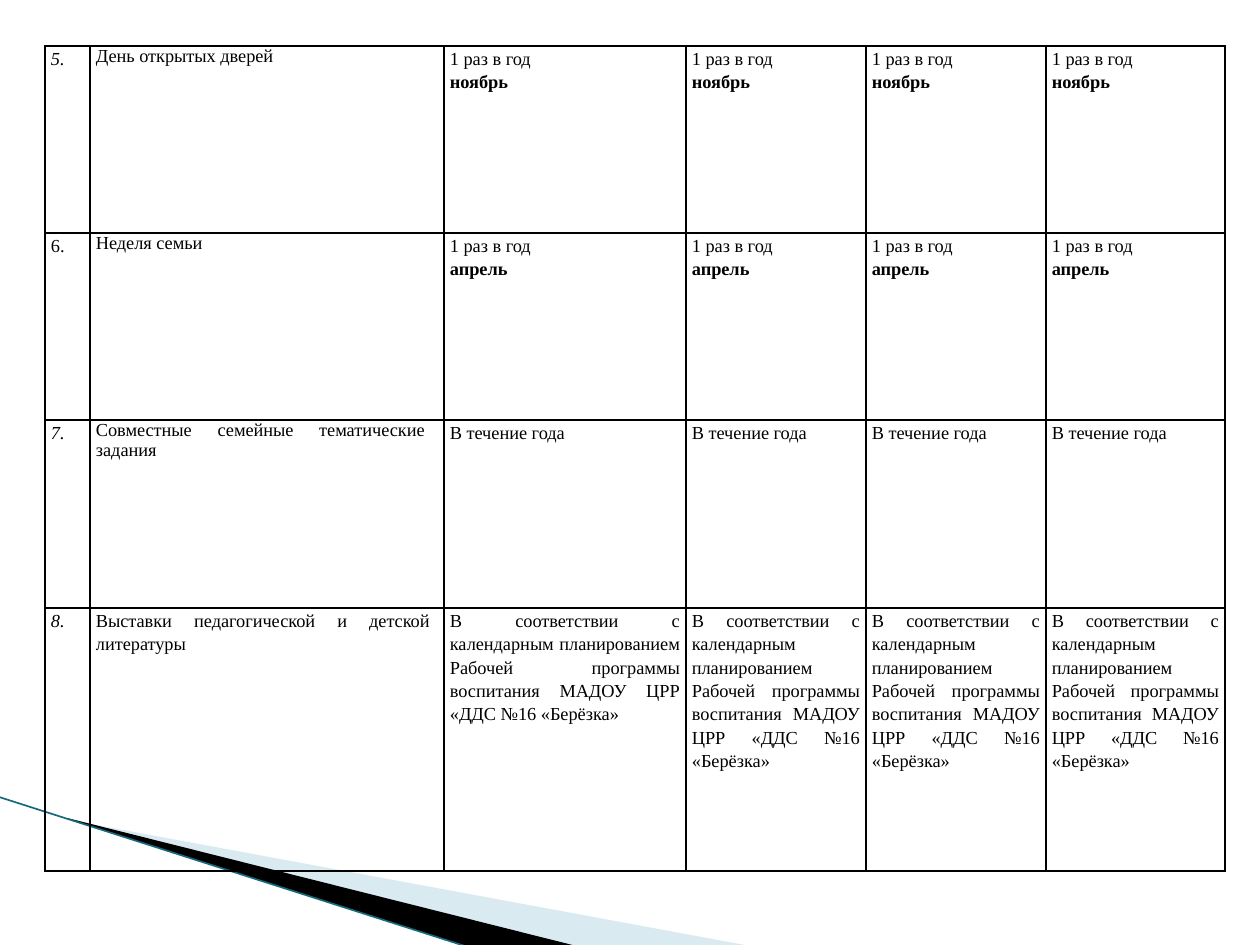
from lxml import etree
from pptx import Presentation
from pptx import util as u
from pptx.dml.color import RGBColor
from pptx.enum import shapes, text
from pptx.oxml.ns import qn

PX = 914400 / 126
BLACK = RGBColor(0, 0, 0)
PALE_BLUE = RGBColor(0xA0, 0xCB, 0xDC)
TEAL = RGBColor(0x16, 0x69, 0x7F)
FONT = "Times New Roman"

PLAN = "В соответствии с календарным планированием Рабочей программы воспитания МАДОУ ЦРР «ДДС №16 «Берёзка»"
GROUPS = 4
EVENTS = [
    {"number": "5.", "italic": True, "title": "День открытых дверей", "spacing": 0.99,
     "indent": 0, "when": ["1 раз в год"], "month": "ноябрь"},
    {"number": "6.", "italic": False, "title": "Неделя семьи", "spacing": 0.99,
     "indent": 0, "when": ["1 раз в год"], "month": "апрель"},
    {"number": "7.", "italic": True, "title": "Совместные семейные тематические задания", "spacing": 0.99,
     "indent": 13, "when": ["В течение года"], "month": None},
    {"number": "8.", "italic": True, "title": "Выставки педагогической и детской литературы", "spacing": 1.15,
     "indent": 8, "when": [PLAN], "month": None},
]
TABLE_LEFT, TABLE_TOP = 45, 46
COLUMNS = [45, 354, 242, 180, 180, 179]
ROWS = [187, 187, 188, 263]

PALE_WEDGE = [(69, 820), (750, 946), (575, 946), (69, 819)]
BLACK_WEDGE = [(67, 818), (576, 946), (469, 947), (68, 819)]
EDGE = [(-1, 797), (468, 947)]


def px(value):
    return u.Emu(round(value * PX))


def add_wedge(page, points, color, alpha=None):
    builder = page.shapes.build_freeform(*points[0], scale=PX)
    builder.add_line_segments(points[1:], close=True)
    wedge = builder.convert_to_shape()
    wedge.shadow.inherit = False
    wedge.line.fill.background()
    wedge.fill.solid()
    wedge.fill.fore_color.rgb = color
    if alpha:
        tint = wedge._element.spPr.find(".//" + qn("a:srgbClr"))
        etree.SubElement(tint, qn("a:alpha"), val=str(alpha * 1000))


def add_edge(page):
    (x1, y1), (x2, y2) = EDGE
    edge = page.shapes.add_connector(shapes.MSO_CONNECTOR.STRAIGHT, px(x1), px(y1), px(x2), px(y2))
    edge.line.color.rgb = TEAL
    edge.line.width = u.Pt(0.95)
    etree.SubElement(edge._element.spPr, qn("a:effectLst"))


def style_cell(cell):
    cell.margin_left = cell.margin_right = px(6)
    cell.margin_top = cell.margin_bottom = 0
    properties = cell._tc.get_or_add_tcPr()
    for side in ("lnL", "lnR", "lnT", "lnB"):
        border = etree.SubElement(properties, qn("a:" + side), w=str(u.Pt(1)))
        fill = etree.SubElement(border, qn("a:solidFill"))
        etree.SubElement(fill, qn("a:srgbClr"), val=str(BLACK))
    cell.fill.background()


def write_cell(cell, lines, spacing=1.15, indent=0):
    style_cell(cell)
    for index, (words, bold, italic) in enumerate(lines):
        para = cell.text_frame.add_paragraph() if index else cell.text_frame.paragraphs[0]
        para.alignment = text.PP_ALIGN.JUSTIFY
        para.line_spacing = spacing
        if indent:
            para._p.get_or_add_pPr().set("marR", str(px(indent)))
        span = para.add_run()
        span.text = words
        span.font.name = FONT
        span.font.size = u.Pt(10.5)
        span.font.bold = bold
        span.font.italic = italic
        span.font.color.rgb = BLACK


def add_schedule(page):
    frame = page.shapes.add_table(len(ROWS), len(COLUMNS), px(TABLE_LEFT), px(TABLE_TOP),
                                  px(sum(COLUMNS)), px(sum(ROWS)))
    table = frame.table
    table.first_row = table.horz_banding = False
    for column, width in zip(table.columns, COLUMNS):
        column.width = px(width)
    for row, height, event in zip(table.rows, ROWS, EVENTS):
        row.height = px(height)
        number, title, *groups = row.cells
        write_cell(number, [(event["number"], False, event["italic"])])
        write_cell(title, [(event["title"], False, False)], event["spacing"], event["indent"])
        lines = [(words, False, False) for words in event["when"]]
        if event["month"]:
            lines.append((event["month"], True, False))
        for cell in groups[:GROUPS]:
            write_cell(cell, lines)


def main():
    deck = Presentation()
    deck.slide_width, deck.slide_height = px(1260), px(945)
    page = deck.slides.add_slide(deck.slide_layouts[6])
    add_wedge(page, PALE_WEDGE, PALE_BLUE, alpha=40)
    add_wedge(page, BLACK_WEDGE, BLACK)
    add_edge(page)
    add_schedule(page)
    deck.save("out.pptx")


if __name__ == "__main__":
    main()
